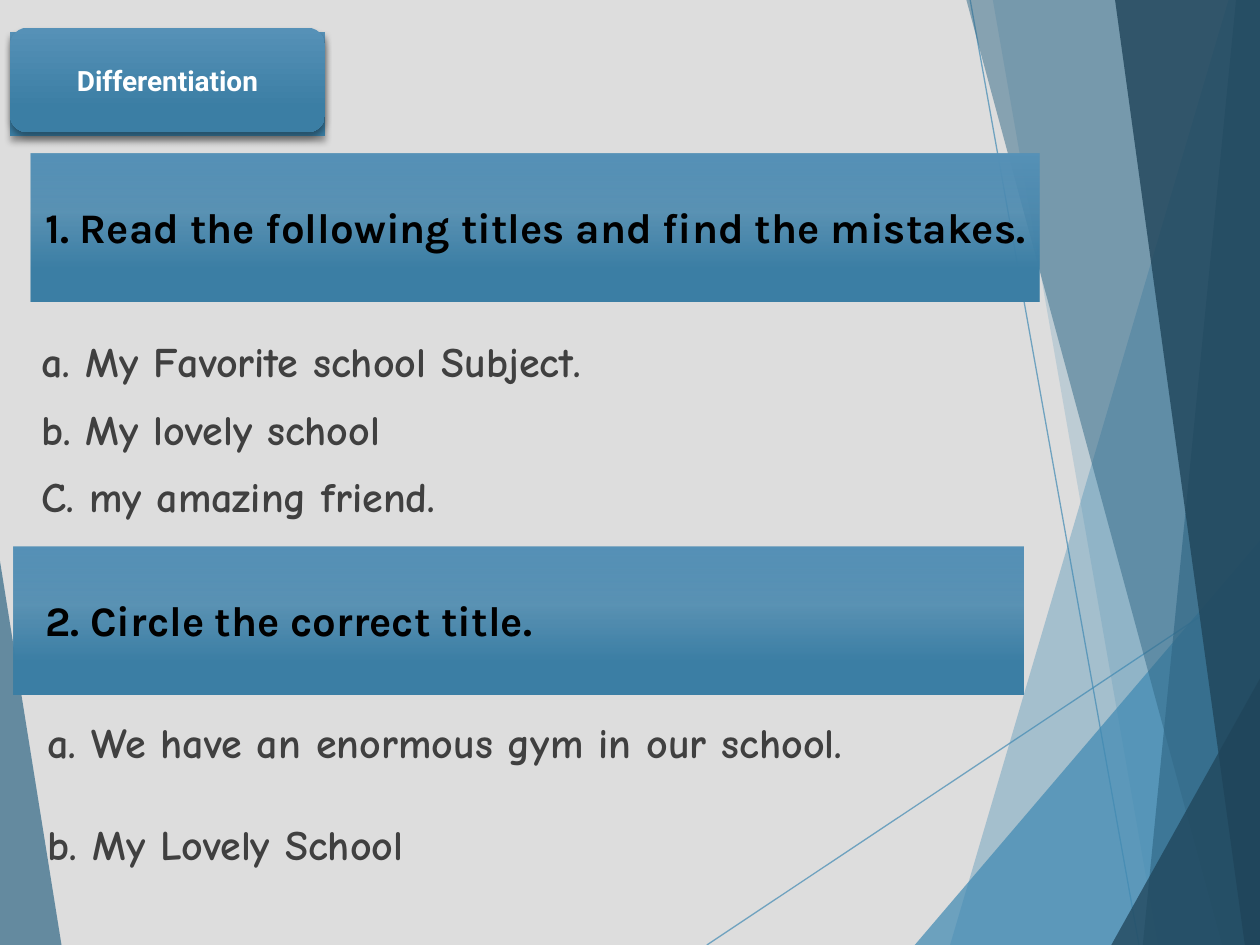
from dataclasses import dataclass

from lxml.etree import SubElement
from pptx import Presentation
from pptx.dml.color import RGBColor
from pptx.enum.shapes import MSO_CONNECTOR, MSO_SHAPE
from pptx.enum.text import MSO_ANCHOR, PP_ALIGN
from pptx.oxml.ns import qn
from pptx.util import Inches, Pt

COLORS = {
    "background": "DDDDDD", "blue": "418AB3", "steel": "316886", "navy": "20455A",
    "light": "5691B7", "middle": "4988AE", "deep": "3B7EA4",
    "white": "FFFFFF", "black": "000000", "body": "404040",
}
COLS, ROWS = 100, 75  # grid over the slide
WIDTH, HEIGHT = Inches(10), Inches(7.5)


@dataclass(frozen=True)
class Box:
    col: float
    row: float
    cols: float
    rows: float

    def emu(self) -> tuple[int, ...]:
        return x(self.col), y(self.row), x(self.cols), y(self.rows)


@dataclass(frozen=True)
class Facet:
    color: str
    alpha: int
    points: tuple[tuple[float, float], ...]


@dataclass(frozen=True)
class Style:
    font: str
    size: int
    color: str


@dataclass(frozen=True)
class Stop:
    position: int
    color: str
    alpha: int = 100


BUTTON = Style("Roboto", 16, "white")
HEADING = Style("Karla", 24, "black")
ANSWER = Style("Comic Neue", 24, "body")

BUTTON_STOPS = (Stop(0, "light"), Stop(78, "deep"))
BAND_STOPS = (Stop(0, "light"), Stop(39, "middle", 88), Stop(78, "deep"))

RAYS = (((56.1, 75), (100.1, 45.7)), ((77, 0), (90.4, 75)))
FACETS = (
    Facet("blue", 36, ((97.5, 0), (75.4, 75), (100.2, 75), (100.1, 0))),
    Facet("blue", 20, ((78.8, 0), (91.9, 75), (100.1, 75), (100.1, 0))),
    Facet("blue", 72, ((72.6, 75), (100, 42.9), (100.1, 75))),
    Facet("steel", 50, ((76.7, 0), (97, 75), (100.1, 75), (100.1, 0))),
    Facet("steel", 66, ((98.1, 0), (90.7, 75), (100.1, 75), (100, 0))),
    Facet("navy", 80, ((88.5, 0), (98.8, 75), (100.2, 75), (100, 0))),
    Facet("navy", 76, ((88.2, 75), (100.2, 53.5), (100.2, 75))),
    Facet("steel", 70, ((-0.1, 43.9), (4.9, 75.1), (-0.1, 75))),
)
# Each band with the heading that lies on it
BANDS = (
    (Box(2.4, 12.2, 80.1, 11.7), "1. Read the following titles and find the mistakes."),
    (Box(1.1, 43.4, 80.1, 11.7), "2. Circle the correct title."),
)


def x(cols: float) -> int:
    return round(WIDTH * cols / COLS)


def y(rows: float) -> int:
    return round(HEIGHT * rows / ROWS)


def rgb(name: str) -> RGBColor:
    return RGBColor.from_string(COLORS[name])


def set_alpha(parent, percent: int) -> None:
    for clr in parent.iter(qn("a:srgbClr")):
        SubElement(clr, qn("a:alpha"), val=str(percent * 1000))


def fill_gradient(sp, stops: tuple[Stop, ...]) -> None:
    sp.fill.gradient()
    sp.fill.gradient_angle = 270
    gs_lst = sp._element.spPr.find(qn("a:gradFill")).find(qn("a:gsLst"))
    for gs in list(gs_lst):
        gs_lst.remove(gs)
    for stop in stops:
        gs = SubElement(gs_lst, qn("a:gs"), pos=str(stop.position * 1000))
        SubElement(gs, qn("a:srgbClr"), val=COLORS[stop.color])
        if stop.alpha < 100:
            set_alpha(gs, stop.alpha)
    sp.line.fill.background()


def add_shadow(sp) -> None:
    sp.shadow.inherit = False
    shadow = SubElement(sp._element.spPr.find(qn("a:effectLst")), qn("a:outerShdw"),
                        blurRad=str(Pt(4)), dist=str(Pt(3)), dir="5400000",
                        algn="t", rotWithShape="0")
    SubElement(shadow, qn("a:srgbClr"), val=COLORS["black"])
    set_alpha(shadow, 35)


def write(sp, lines: tuple[str, ...], style: Style, align=PP_ALIGN.LEFT,
          gap: float = 0) -> None:
    tf = sp.text_frame
    tf.word_wrap = True
    tf.text = "\n".join(lines)
    for i, p in enumerate(tf.paragraphs):
        p.alignment = align
        p.space_before = Pt(gap if i else 0)
        p.font.name, p.font.size, p.font.bold = style.font, Pt(style.size), True
        p.font.color.rgb = rgb(style.color)


def add_text(s, box: Box, lines: tuple[str, ...], style: Style, gap: float = 0):
    sp = s.shapes.add_textbox(*box.emu())
    write(sp, lines, style, gap=gap)
    return sp


def add_ray(s, start: tuple[float, float], end: tuple[float, float]) -> None:
    ray = s.shapes.add_connector(MSO_CONNECTOR.STRAIGHT, x(start[0]), y(start[1]),
                                 x(end[0]), y(end[1]))
    ray.line.color.rgb, ray.line.width = rgb("blue"), Pt(0.75)
    set_alpha(ray._element.spPr, 70)
    SubElement(ray._element.spPr, qn("a:effectLst"))


def add_facet(s, facet: Facet) -> None:
    points = [(x(col), y(row)) for col, row in facet.points]
    builder = s.shapes.build_freeform(*points[0])
    builder.add_line_segments(points[1:], close=True)
    sp = builder.convert_to_shape()
    sp.shadow.inherit = False
    sp.fill.solid()
    sp.fill.fore_color.rgb = rgb(facet.color)
    set_alpha(sp._element.spPr, facet.alpha)
    sp.line.fill.background()


def add_band(s, box: Box, heading: str) -> None:
    sp = s.shapes.add_shape(MSO_SHAPE.RECTANGLE, *box.emu())
    sp.shadow.inherit = False
    fill_gradient(sp, BAND_STOPS)
    add_text(s, Box(2.6, box.row + 3.3, 80.8, 5), (heading,), HEADING)


def style_button(sp) -> None:
    fill_gradient(sp, BUTTON_STOPS)
    add_shadow(sp)
    write(sp, ("Differentiation",), BUTTON, PP_ALIGN.CENTER)
    sp.text_frame.vertical_anchor = MSO_ANCHOR.MIDDLE


def main() -> None:
    prs = Presentation()
    prs.slide_width, prs.slide_height = WIDTH, HEIGHT
    s = prs.slides.add_slide(prs.slide_layouts[5])
    s.background.fill.solid()
    s.background.fill.fore_color.rgb = rgb("background")

    # Faceted backdrop
    for start, end in RAYS:
        add_ray(s, start, end)
    for facet in FACETS:
        add_facet(s, facet)

    # Titles to correct
    titles = add_text(s, Box(2.3, 20, 53.7, 36.7),
                      ("a. My Favorite school Subject.", "b. My lovely school",
                       "C. my amazing friend."), ANSWER, gap=10)
    titles.text_frame.margin_top = y(6.6)
    titles.fill.solid()
    titles.fill.fore_color.rgb = rgb("background")

    # Slide title, in front of the backdrop
    title = s.shapes.title
    title.left, title.top, title.width, title.height = Box(0.8, 2.5, 25, 8.3).emu()
    style_button(title)
    s.shapes._spTree.append(title._element)

    # Task bands
    for box, heading in BANDS:
        add_band(s, box, heading)

    # Titles to choose from
    add_text(s, Box(2.8, 56.4, 81.7, 13.1),
             ("a. We have an enormous gym in our school.", "b. My Lovely School"),
             ANSWER, gap=29)

    # Rounded button face
    style_button(s.shapes.add_shape(MSO_SHAPE.ROUNDED_RECTANGLE,
                                    *Box(0.8, 2.2, 25, 8.3).emu()))
    prs.save("out.pptx")


if __name__ == "__main__":
    main()
